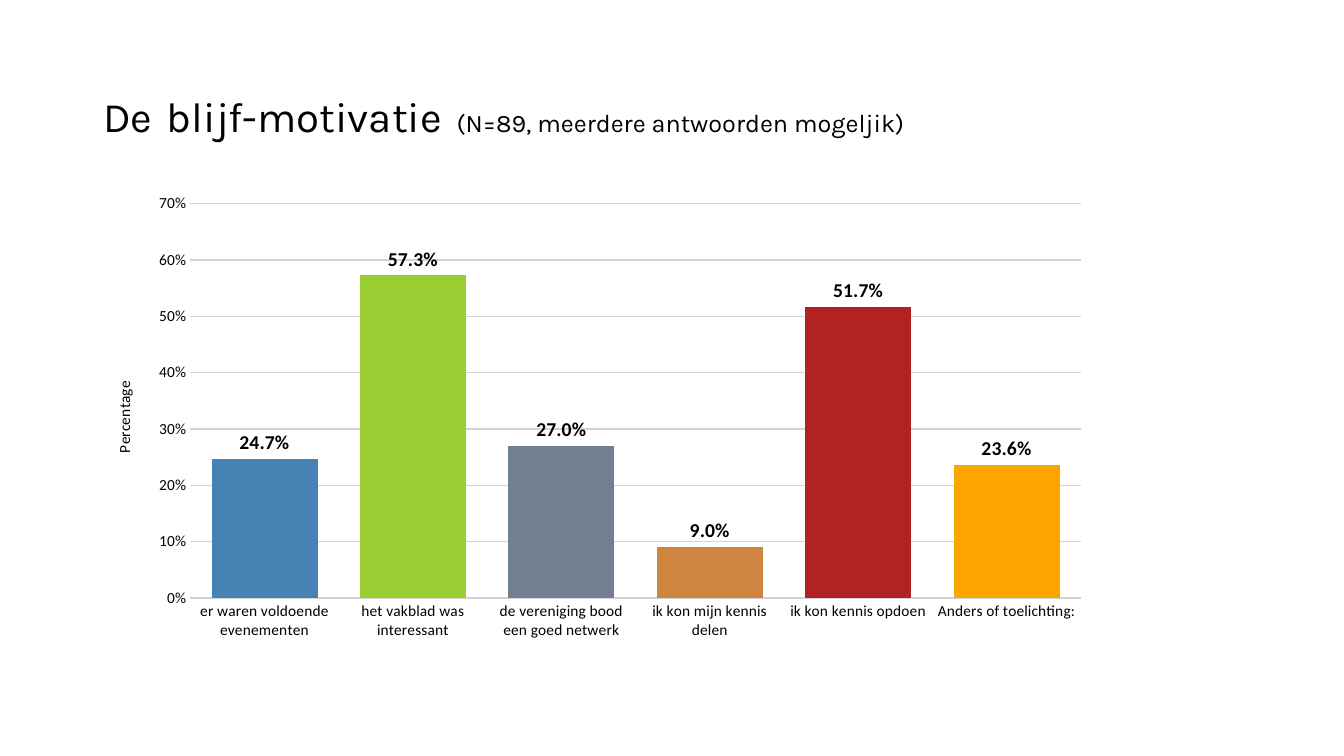
from pptx import Presentation
from pptx.chart.data import CategoryChartData as Data
from pptx.dml.color import RGBColor as Rgb
from pptx.enum.chart import XL_CHART_TYPE as Kind, XL_LABEL_POSITION as Spot, XL_TICK_MARK as Tick
from pptx.enum.text import MSO_ANCHOR as Anchor, PP_ALIGN as Align
from pptx.util import Emu, Pt

THEME = {
    "ink": "000000", "paper": "FFFFFF", "grid": "D3D3D3",
    "head": "Karla", "body": "Calibri",
    "title": 30, "gap": 44, "note": 18, "axis": 11, "label": 14,
}
BARS = [
    ("er waren voldoende evenementen", 0.247, "4682B4"),
    ("het vakblad was interessant", 0.573, "9ACD32"),
    ("de vereniging bood een goed netwerk", 0.27, "708090"),
    ("ik kon mijn kennis delen", 0.09, "CD853F"),
    ("ik kon kennis opdoen", 0.517, "B22222"),
    ("Anders of toelichting:", 0.236, "FFA500"),
]
TITLE = [
    ("De", "title"), (" ", "gap"), ("blijf-motivatie", "title"), (" ", "gap"),
    ("(N=89, meerdere antwoorden mogeljik)", "note"),
]
SCALE = 914400 / 100.8


def px(*nums):
    """Turn px lengths into EMU."""
    return [Emu(round(n * SCALE)) for n in nums]


def style(font, face, size, bold=False):
    form = {"name": THEME[face], "size": Pt(THEME[size]), "bold": bold}
    for key, val in form.items():
        setattr(font, key, val)
    font.color.rgb = Rgb.from_string(THEME["ink"])


deck = Presentation()
deck.slide_width, deck.slide_height = px(1344, 756)
slide = deck.slides.add_slide(deck.slide_layouts[5])

# Title
title = slide.shapes.title
title.left, title.top, title.width, title.height = px(93, 40, 1159, 146)
frame = title.text_frame
frame.word_wrap = True
frame.vertical_anchor = Anchor.MIDDLE
para = frame.paragraphs[0]
para.alignment = Align.LEFT
para.line_spacing = 0.9
for text, size in TITLE:
    run = para.add_run()
    run.text = text
    style(run.font, "head", size)

# Chart
names, vals, fills = zip(*BARS)
data = Data(number_format="0.0%")
data.categories = names
data.add_series("Percentage", vals)
chart = slide.shapes.add_chart(Kind.COLUMN_CLUSTERED, *px(93, 185, 1008, 464), data).chart
chart.has_legend = False
chart.has_title = False
style(chart.font, "body", "axis")

# Axes
cat, val = chart.category_axis, chart.value_axis
for axis in (cat, val):
    axis.major_tick_mark = Tick.INSIDE
    axis.minor_tick_mark = Tick.NONE
    axis.format.line.fill.background()
    style(axis.tick_labels.font, "body", "axis")
scale = {"minimum_scale": 0, "maximum_scale": 0.7, "major_unit": 0.1}
for key, num in scale.items():
    setattr(val, key, num)
val.tick_labels.number_format = "0%"
val.tick_labels.number_format_is_linked = False
grid = val.major_gridlines.format.line
grid.width = Pt(1)
grid.color.rgb = Rgb.from_string(THEME["grid"])
name = val.axis_title.text_frame
name.text = "Percentage"
style(name.paragraphs[0].runs[0].font, "body", "axis")

# Bars and labels
plot = chart.plots[0]
plot.gap_width = 40
plot.vary_by_categories = False
bars = plot.series[0]
for i, fill in enumerate(fills):
    paint = bars.points[i].format.fill
    paint.solid()
    paint.fore_color.rgb = Rgb.from_string(fill)
labels = bars.data_labels
form = {
    "show_value": True, "position": Spot.OUTSIDE_END,
    "number_format": "0.0%", "number_format_is_linked": False,
}
for key, item in form.items():
    setattr(labels, key, item)
style(labels.font, "body", "label", True)

deck.save("out.pptx")
